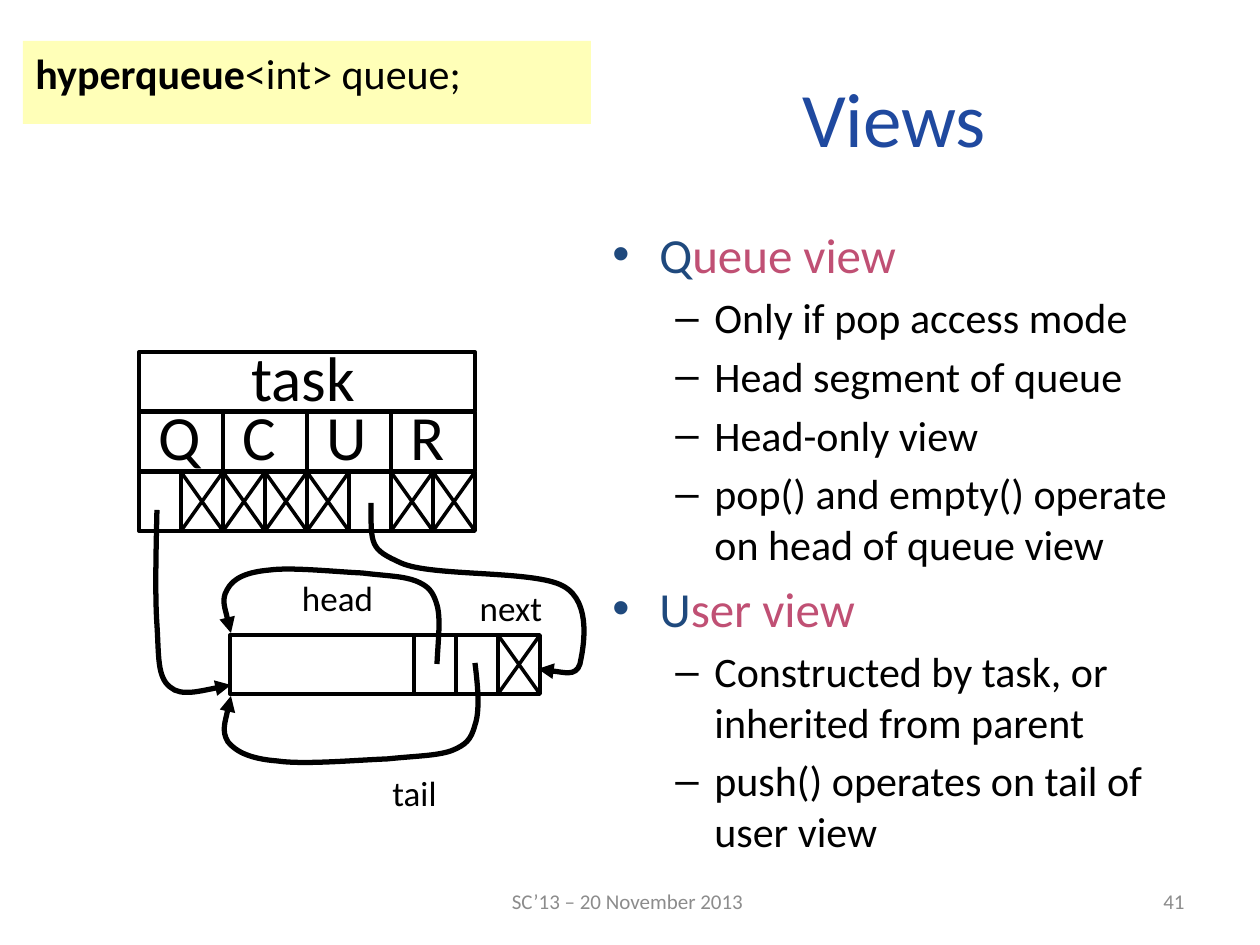
from dataclasses import dataclass

from lxml.etree import SubElement
from pptx import Presentation
from pptx.dml.color import RGBColor as RGB
from pptx.enum.shapes import MSO_CONNECTOR as Connector, MSO_SHAPE as Shape
from pptx.enum.text import MSO_ANCHOR as Anchor, MSO_AUTO_SIZE as AutoSize, PP_ALIGN as Align
from pptx.oxml.ns import qn
from pptx.util import Inches, Pt

PX = 7257  # EMU in one px, at 126 px to the inch


@dataclass(frozen=True)
class Theme:
    font: str = "Calibri"
    ink: str = "000000"
    title: str = "1F499F"
    initial: str = "1F497D"
    accent: str = "C05074"
    muted: str = "8C8C8C"
    code_fill: str = "FFFFB8"
    title_size: int = 44
    diagram_size: int = 36
    topic_size: int = 28
    body_size: int = 24
    label_size: int = 20
    footer_size: int = 12
    outline: float = 2.25
    cross: float = 2
    arrow: float = 3


theme = Theme()


def write_text(para, text, size=theme.body_size, color=theme.ink, bold=False, align=None):
    """Add one formatted span to a paragraph."""
    span = para.add_run()
    span.text = text
    span.font.name = theme.font
    span.font.size = Pt(size)
    span.font.bold = bold
    span.font.color.rgb = RGB.from_string(color)
    if align is not None:
        para.alignment = align


def draw_line(x1, y1, x2, y2, width=theme.outline):
    line = slide.shapes.add_connector(Connector.STRAIGHT, x1 * PX, y1 * PX, x2 * PX, y2 * PX)
    line.line.width = Pt(width)
    line.line.color.rgb = RGB.from_string(theme.ink)
    SubElement(line._element.spPr, qn("a:effectLst"))
    return line


deck = Presentation()
deck.slide_width, deck.slide_height = Inches(10), Inches(7.5)
slide = deck.slides.add_slide(deck.slide_layouts[5])

title = slide.shapes.title
title.left, title.top, title.width, title.height = 591 * PX, 38 * PX, 606 * PX, 157 * PX
title.text_frame.vertical_anchor = Anchor.MIDDLE
write_text(title.text_frame.paragraphs[0], "Views", size=theme.title_size,
           color=theme.title, align=Align.CENTER)

# Footer and page number
for text, left, width, align in [
    ("SC’13 – 20 November 2013", 428, 399, Align.CENTER),
    ("41", 903, 294, Align.RIGHT),
]:
    box = slide.shapes.add_textbox(left * PX, 876 * PX, width * PX, 50 * PX)
    box.text_frame.word_wrap = True
    box.text_frame.vertical_anchor = Anchor.MIDDLE
    write_text(box.text_frame.paragraphs[0], text, size=theme.footer_size,
               color=theme.muted, align=align)

# Code line
code = slide.shapes.add_shape(Shape.RECTANGLE, 23 * PX, 41 * PX, 568 * PX, 83 * PX)
code.shadow.inherit = False
code.fill.solid()
code.fill.fore_color.rgb = RGB.from_string(theme.code_fill)
code.line.fill.background()
code.text_frame.word_wrap = True
code.text_frame.vertical_anchor = Anchor.TOP
code_para = code.text_frame.paragraphs[0]
write_text(code_para, "hyperqueue", bold=True, align=Align.LEFT)
write_text(code_para, "<int> queue;")

# Task frame: a name row, a row of views, and a pair of pointers for each view
LEFT, TOP, CELL, ROW, HEIGHT = 139, 352, 42, 60, 59
VIEWS = "QCUR"
PAIR = 2 * CELL
views_top, pointers_top = TOP + ROW, TOP + 2 * ROW
frame_width = len(VIEWS) * PAIR
SEGMENT_LEFT, SEGMENT_TOP, SEGMENT_WIDTH = 230, 635, 310
segment_right = SEGMENT_LEFT + SEGMENT_WIDTH

pointer_pairs = [(LEFT + i * PAIR, pointers_top, PAIR, True) for i in range(len(VIEWS))]
for left, top, width, halved in pointer_pairs + [
    (LEFT, views_top, frame_width, True),
    (LEFT, TOP, frame_width, False),
    (SEGMENT_LEFT, SEGMENT_TOP, SEGMENT_WIDTH, False),
]:
    cell = slide.shapes.add_shape(Shape.RECTANGLE, left * PX, top * PX, width * PX, HEIGHT * PX)
    cell.shadow.inherit = False
    cell.fill.background()
    cell.line.width = Pt(theme.outline)
    cell.line.color.rgb = RGB.from_string(theme.ink)
    if halved:
        middle = left + width // 2
        divider = draw_line(middle, top, middle, top + HEIGHT)
        divider.begin_connect(cell, 0)
        divider.end_connect(cell, 2)

for x in (LEFT + PAIR, LEFT + 3 * PAIR):
    draw_line(x, views_top, x, views_top + HEIGHT)
for i in (1, 2, 3):
    x = segment_right - i * CELL
    draw_line(x, SEGMENT_TOP, x, SEGMENT_TOP + HEIGHT)

# Crosses mark null pointers
null_cells = [(LEFT + i * CELL, pointers_top) for i in (1, 2, 3, 4, 6, 7)]
for x, y in null_cells + [(segment_right - CELL, SEGMENT_TOP)]:
    draw_line(x, y, x + CELL, y + HEIGHT, width=theme.cross)
    draw_line(x + CELL, y, x, y + HEIGHT, width=theme.cross)

# Pointer arrows: a start, then two control points and an end for each curve
head_pointer = [
    (437, 664), (438, 641), (441, 619), (437, 605), (433, 591), (428, 586), (416, 581),
    (403, 576), (387, 576), (362, 573), (338, 572), (291, 567), (270, 570),
    (247, 572), (233, 578), (227, 590), (221, 600), (231, 633), (231, 633)]
tail_pointer = [
    (475, 663), (478, 687), (480, 711), (475, 725), (471, 740), (466, 745), (451, 751),
    (436, 756), (416, 756), (387, 759), (358, 760), (304, 765), (277, 761),
    (251, 759), (236, 752), (228, 742), (221, 731), (231, 696), (231, 696)]
queue_view_pointer = [
    (157, 510), (156, 553), (155, 596), (157, 625), (159, 655), (157, 677), (170, 687),
    (181, 697), (231, 685), (231, 685)]
user_view_pointer = [
    (371, 503), (371, 546), (370, 549), (401, 563), (432, 577), (534, 570), (563, 586),
    (593, 602), (583, 650), (580, 664), (576, 677), (538, 669), (538, 669)]
for start, *points in (head_pointer, tail_pointer, queue_view_pointer, user_view_pointer):
    builder = slide.shapes.build_freeform(*start, scale=PX)
    builder.add_line_segments(points, close=False)
    arrow = builder.convert_to_shape()
    arrow.shadow.inherit = False
    arrow.fill.background()
    arrow.line.width = Pt(theme.arrow)
    arrow.line.color.rgb = RGB.from_string(theme.ink)
    SubElement(arrow.line._get_or_add_ln(), qn("a:tailEnd"), type="triangle")
    outline = next(arrow._element.iter(qn("a:path")))
    segments = outline.findall(qn("a:lnTo"))
    for i in range(0, len(segments), 3):
        curve = SubElement(outline, qn("a:cubicBezTo"))
        for segment in segments[i:i + 3]:
            curve.append(segment[0])
            outline.remove(segment)

# Diagram labels
view_labels = [(view, LEFT + 7 + i * PAIR, 391, width, 90, theme.diagram_size, Align.LEFT)
               for i, (view, width) in enumerate(zip(VIEWS, (69, 59, 67, 60)))]
for text, left, top, width, height, size, align in view_labels + [
    ("task", 239, 332, 131, 90, theme.diagram_size, Align.LEFT),
    ("head", 289, 570, 97, 55, theme.label_size, Align.CENTER),
    ("tail", 379, 765, 71, 55, theme.label_size, Align.CENTER),
    ("next", 467, 580, 88, 55, theme.label_size, Align.CENTER),
]:
    box = slide.shapes.add_textbox(left * PX, top * PX, width * PX, height * PX)
    box.text_frame.word_wrap = False
    box.text_frame.auto_size = AutoSize.SHAPE_TO_FIT_TEXT
    write_text(box.text_frame.paragraphs[0], text, size=size, align=align)

# Bulleted explanation
topics = {
    "Queue view": ["Only if pop access mode", "Head segment of queue", "Head-only view",
                   "pop() and empty() operate on head of queue view"],
    "User view": ["Constructed by task, or inherited from parent",
                  "push() operates on tail of user view"],
}
rows = []
for topic, details in topics.items():
    rows.append((0, [(topic[0], theme.initial), (topic[1:], theme.accent)]))
    rows += [(1, [(detail, theme.ink)]) for detail in details]
levels = [("•", 47, 47, theme.topic_size), ("–", 102, 39, theme.body_size)]

body = slide.shapes.add_textbox(600 * PX, 218 * PX, 615 * PX, 674 * PX).text_frame
body.word_wrap = True
for i, (level, spans) in enumerate(rows):
    bullet, margin, hang, size = levels[level]
    para = body.add_paragraph() if i else body.paragraphs[0]
    para.level = level
    properties = para._p.get_or_add_pPr()
    properties.set("marL", str(margin * PX))
    properties.set("indent", str(-hang * PX))
    SubElement(properties, qn("a:buFont"), typeface="Arial")
    SubElement(properties, qn("a:buChar"), char=bullet)
    if i:
        para.space_before = Pt(round(size * 0.2, 1))
    for text, color in spans:
        write_text(para, text, size=size, color=color)

deck.save("out.pptx")
